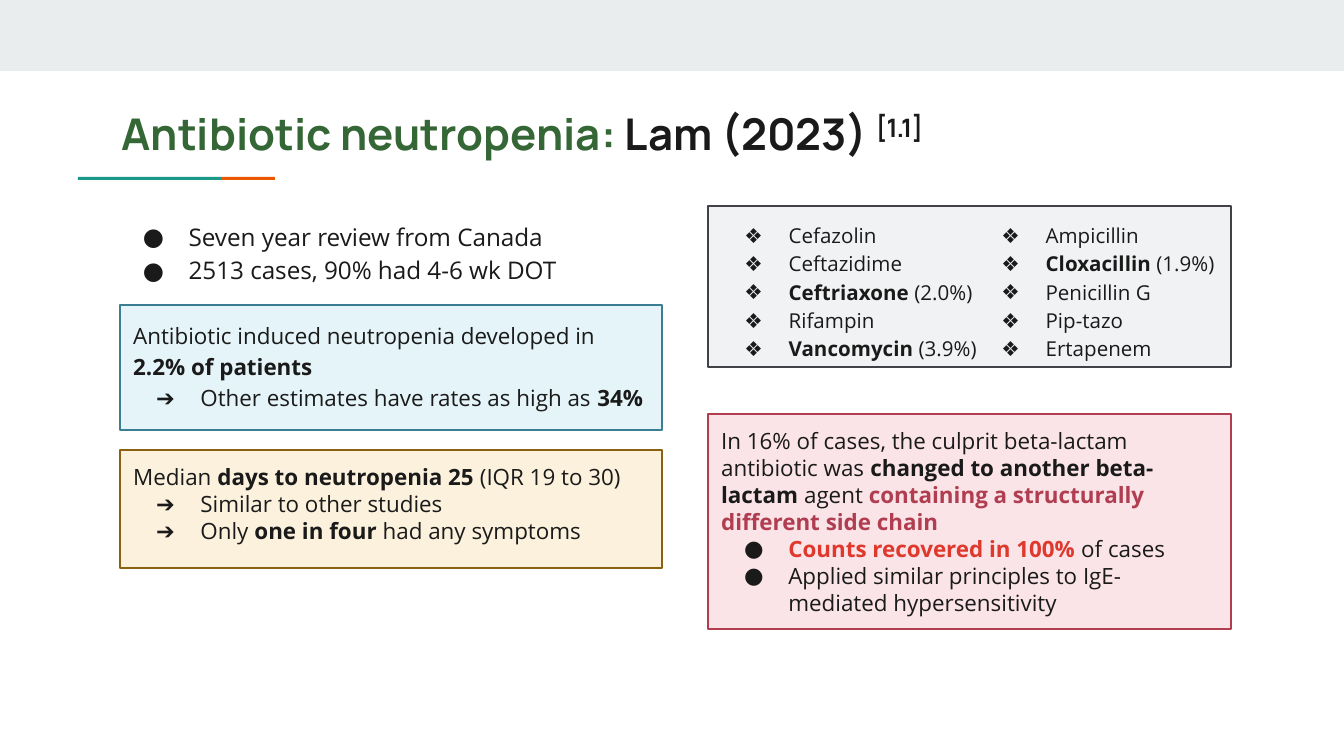
import pptx
import pptx.dml.color
import pptx.enum.shapes
import pptx.enum.text
import pptx.oxml
import pptx.oxml.ns
import pptx.util

PX = 9144000 / 1344  # EMU per px
THEME = {
    "ink": "1A1A1A", "green": "356635", "band": "E9EDEE",
    "teal": "1A9988", "orange": "EB5600", "rose": "B03D50", "red": "DF382C",
    "blue_box": ("E5F4F8", "3B7E94"), "grey_box": ("F1F2F3", "404247"),
    "sand_box": ("FBF1DD", "896110"), "rose_box": ("FAE4E8", "B03D50"),
    "head_font": "Manrope", "body_font": "Open Sans",
    "title": 23.4, "lead": 13, "box": 12, "drug": 11,
}
RGB = pptx.dml.color.RGBColor.from_string


def place(sp, box):
    sp.left, sp.top, sp.width, sp.height = [round(v * PX) for v in box]


def write(sp, paragraphs, size, spacing=1.0, font=THEME["body_font"]):
    """Fill a shape from (bullet, runs) pairs; a run is text, bold, colour."""
    tf = sp.text_frame
    tf.word_wrap = True
    tf.auto_size = pptx.enum.text.MSO_AUTO_SIZE.NONE
    tf.vertical_anchor = pptx.enum.text.MSO_ANCHOR.TOP
    tf.margin_left = tf.margin_right = pptx.util.Inches(0.1)
    tf.margin_top = tf.margin_bottom = pptx.util.Inches(0.1)
    for i, (bullet, runs) in enumerate(paragraphs):
        p = tf.add_paragraph() if i else tf.paragraphs[0]
        p.alignment = pptx.enum.text.PP_ALIGN.LEFT
        p.line_spacing = spacing
        p.space_before = pptx.util.Pt(0)
        if bullet:
            pPr = p._p.get_or_add_pPr()
            pPr.set("marL", str(pptx.util.Inches(0.5)))
            pPr.set("indent", str(-pptx.util.Inches(0.34 if size == THEME["lead"] else 0.33)))
            ns = pptx.oxml.ns.nsdecls("a")
            for xml in (f'<a:buClr {ns}><a:srgbClr val="{THEME["ink"]}"/></a:buClr>',
                        f'<a:buFont {ns} typeface="{font}"/>',
                        f'<a:buChar {ns} char="{bullet}"/>'):
                pPr.append(pptx.oxml.parse_xml(xml))
        for text, bold, colour in runs:
            r = p.add_run()
            r.text = text
            r.font.name = font
            r.font.size = pptx.util.Pt(size)
            r.font.bold = bold
            r.font.color.rgb = RGB(THEME[colour])


prs = pptx.Presentation()
prs.slide_width, prs.slide_height = round(1344 * PX), round(756 * PX)
s = prs.slides.add_slide(prs.slide_layouts.get_by_name("Comparison"))
title, lead, drugs_left, drugs_right, spare = s.placeholders
spare._element.getparent().remove(spare._element)

# Top band and accent line under the title
RECT = pptx.enum.shapes.MSO_SHAPE.RECTANGLE
for box, colour in (((0, 0, 1344, 71), "band"),
                    ((221, 177, 54, 3), "orange"),
                    ((78, 177, 143, 3), "teal")):
    bar = s.shapes.add_shape(RECT, 0, 0, 0, 0)
    place(bar, box)
    bar.shadow.inherit = False
    bar.fill.solid()
    bar.fill.fore_color.rgb = RGB(THEME[colour])
    bar.line.fill.background()

# Coloured boxes
boxes = (
    ((120, 305, 542, 125), "blue_box", 1.15, [
        ("", [("Antibiotic induced neutropenia developed in ", False, "ink"),
              ("2.2% of patients", True, "ink")]),
        ("➔", [("Other estimates have rates as high as ", False, "ink"),
               ("34%", True, "ink")])]),
    ((120, 450, 542, 118), "sand_box", 1.0, [
        ("", [("Median ", False, "ink"), ("days to neutropenia 25", True, "ink"),
              (" (IQR 19 to 30)", False, "ink")]),
        ("➔", [("Similar to other studies", False, "ink")]),
        ("➔", [("Only ", False, "ink"), ("one in four", True, "ink"),
               (" had any symptoms", False, "ink")])]),
    ((708, 414, 523, 215), "rose_box", 1.0, [
        ("", [("In 16% of cases, the culprit beta-lactam antibiotic was ", False, "ink"),
              ("changed to another beta-lactam", True, "ink"),
              (" agent ", False, "ink"),
              ("containing a structurally different side chain", True, "rose")]),
        ("●", [("Counts recovered in 100%", True, "red"), (" of cases", False, "ink")]),
        ("●", [("Applied similar principles to IgE-mediated hypersensitivity",
                False, "ink")])]),
    ((708, 206, 523, 161), "grey_box", 1.0, []),
)
for box, style, spacing, paragraphs in boxes:
    sp = s.shapes.add_shape(RECT, 0, 0, 0, 0)
    place(sp, box)
    sp.shadow.inherit = False
    fill, line = THEME[style]
    sp.fill.solid()
    sp.fill.fore_color.rgb = RGB(fill)
    sp.line.color.rgb = RGB(line)
    sp.line.width = pptx.util.Pt(0.75)
    write(sp, paragraphs, THEME["box"], spacing)

# Title with a raised reference mark
place(title, (108, 93, 1130, 79))
write(title, [("", [("Antibiotic neutropenia:", True, "green"),
                    (" Lam (2023) ", True, "ink"), ("[1.1]", True, "ink")])],
      THEME["title"], font=THEME["head_font"])
title.text_frame.paragraphs[0].runs[-1]._r.get_or_add_rPr().set("baseline", "30000")

# Lists: each item is a name and, where reported, a rate that makes the name bold
lists = (
    (lead, (108, 204, 555, 102), "●", "lead",
     [("Seven year review from Canada", ""), ("2513 cases, 90% had 4-6 wk DOT", "")]),
    (drugs_left, (708, 206, 284, 161), "❖", "drug",
     [("Cefazolin", ""), ("Ceftazidime", ""), ("Ceftriaxone ", "(2.0%)"),
      ("Rifampin", ""), ("Vancomycin ", "(3.9%)")]),
    (drugs_right, (965, 206, 297, 243), "❖", "drug",
     [("Ampicillin", ""), ("Cloxacillin ", "(1.9%)"), ("Penicillin G", ""),
      ("Pip-tazo", ""), ("Ertapenem", "")]),
)
for sp, box, bullet, size, items in lists:
    place(sp, box)
    paragraphs = []
    for name, rate in items:
        runs = [(name, bool(rate), "ink")]
        if rate:
            runs.append((rate, False, "ink"))
        paragraphs.append((bullet, runs))
    write(sp, paragraphs, THEME[size], 1.15)
    s.shapes._spTree.append(sp._element)  # bring in front of the boxes

prs.save("out.pptx")
